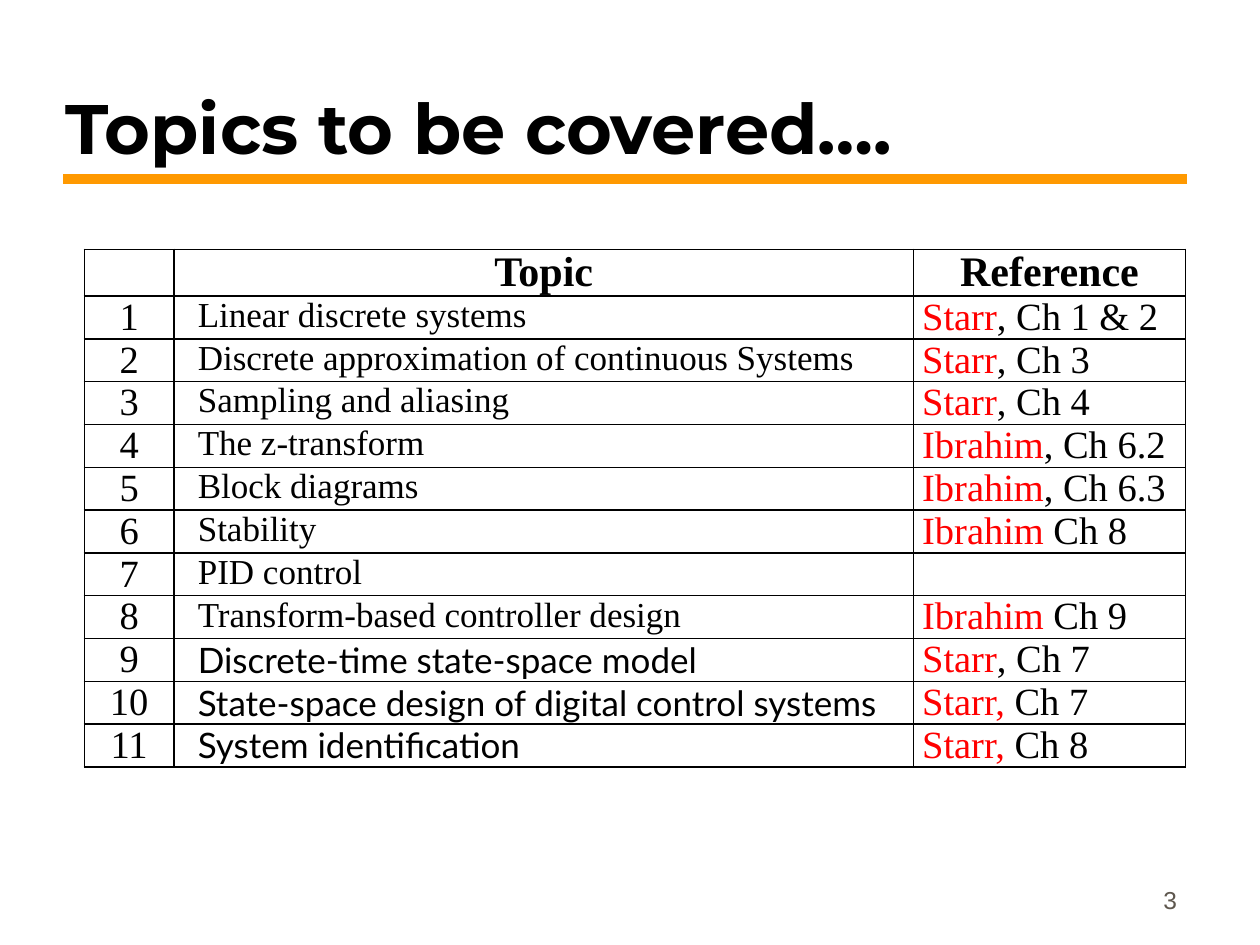
from lxml.etree import SubElement
from pptx import Presentation
from pptx.dml.color import RGBColor
from pptx.enum.shapes import MSO_CONNECTOR as Connector
from pptx.enum.text import MSO_ANCHOR as Anchor, PP_ALIGN as Align
from pptx.oxml import parse_xml
from pptx.oxml.ns import nsdecls, qn
from pptx.util import Inches, Pt

BLACK = RGBColor(0x00, 0x00, 0x00)
WHITE = RGBColor(0xFF, 0xFF, 0xFF)
RED = RGBColor(0xFF, 0x00, 0x00)
ORANGE = RGBColor(0xFF, 0x99, 0x00)
GREY = RGBColor(0x5E, 0x57, 0x4E)
SERIF, SANS = "Times New Roman", "Lato"

TITLE = "Topics to be covered…."
HEADINGS = ("", "Topic", "Reference")
TOPICS = [
    ("Linear discrete systems", SERIF, "Starr", ", Ch 1 & 2"),
    ("Discrete approximation of continuous Systems", SERIF, "Starr", ", Ch 3"),
    ("Sampling and aliasing", SERIF, "Starr", ", Ch 4"),
    ("The z-transform", SERIF, "Ibrahim", ", Ch 6.2"),
    ("Block diagrams", SERIF, "Ibrahim", ", Ch 6.3"),
    ("Stability", SERIF, "Ibrahim ", "Ch 8"),
    ("PID control", SERIF, "", ""),
    ("Transform-based controller design", SERIF, "Ibrahim ", "Ch 9"),
    ("Discrete-time state-space model", SANS, "Starr", ", Ch 7"),
    ("State-space design of digital control systems", SANS, "Starr,", " Ch 7"),
    ("System identification", SANS, "Starr,", " Ch 8"),
]
COLUMNS = (0.71, 5.87, 2.16)
HEADER_HEIGHT, ROW_HEIGHT = 0.37, 0.34


def write(frame, text, size=22, font=SERIF, color=BLACK, bold=False, align=Align.LEFT, indent=0):
    """Append a formatted run to the first paragraph of a text frame."""
    para = frame.paragraphs[0]
    para.alignment = align
    if indent:
        para._p.get_or_add_pPr().set("marL", str(Inches(indent)))
    span = para.add_run()
    span.text = text
    span.font.size, span.font.name, span.font.bold = Pt(size), font, bold
    span.font.color.rgb = color


def style_cell(cell):
    """Give a cell narrow margins, a black border and a white fill."""
    cell.margin_left = cell.margin_right = Inches(0.07)
    cell.margin_top = cell.margin_bottom = 0
    properties = cell._tc.get_or_add_tcPr()
    for side in ("lnL", "lnR", "lnT", "lnB"):
        properties.append(parse_xml(
            f'<a:{side} {nsdecls("a")} w="{Pt(1)}"><a:solidFill>'
            f'<a:srgbClr val="{BLACK}"/></a:solidFill></a:{side}>'))
    cell.fill.solid()
    cell.fill.fore_color.rgb = WHITE


def add_rule(page):
    """Draw the orange line below the title."""
    rule = page.shapes.add_connector(
        Connector.STRAIGHT, Inches(0.5), Inches(1.42), Inches(9.42), Inches(1.42))
    rule.line.color.rgb = ORANGE
    rule.line.width = Pt(6)
    SubElement(rule._element.spPr, qn("a:effectLst"))


def add_title(page):
    """Place and fill the title."""
    box = page.shapes.title
    box.left, box.top, box.width, box.height = map(Inches, (0.42, 0.54, 8.33, 0.85))
    box.text_frame.vertical_anchor = Anchor.BOTTOM
    write(box.text_frame, TITLE, size=40, font="Montserrat", bold=True)


def add_topics(page):
    """Build the table of topics and references."""
    heights = [HEADER_HEIGHT] + [ROW_HEIGHT] * len(TOPICS)
    table = page.shapes.add_table(
        len(heights), len(COLUMNS), Inches(0.67), Inches(1.98),
        Inches(sum(COLUMNS)), Inches(sum(heights))).table
    table.horz_banding = False
    for column, width in zip(table.columns, COLUMNS):
        column.width = Inches(width)
    for row, height in zip(table.rows, heights):
        row.height = Inches(height)
    for cell in table.iter_cells():
        style_cell(cell)
    for column, heading in enumerate(HEADINGS):
        if heading:
            write(table.cell(0, column).text_frame, heading, size=24, bold=True, align=Align.CENTER)
    for number, (topic, font, author, chapter) in enumerate(TOPICS, 1):
        index, subject, reference = (table.cell(number, c).text_frame for c in range(3))
        write(index, str(number), align=Align.CENTER)
        write(subject, topic, size=20, font=font, indent=0.12)
        if author:
            write(reference, author, color=RED)
            write(reference, chapter)


def add_page_number(page):
    """Put the page number in the lower right corner."""
    frame = page.shapes.add_textbox(*map(Inches, (7.36, 6.81, 2.08, 0.5))).text_frame
    frame.word_wrap = True
    frame.vertical_anchor = Anchor.BOTTOM
    write(frame, "3", size=14, font="Arial", color=GREY, align=Align.RIGHT)


def main():
    """Build the slide and save the deck."""
    deck = Presentation()
    deck.slide_width, deck.slide_height = Inches(10), Inches(7.5)
    page = deck.slides.add_slide(deck.slide_layouts[5])
    for add_part in (add_rule, add_title, add_topics, add_page_number):
        add_part(page)
    deck.save("out.pptx")


if __name__ == "__main__":
    main()
